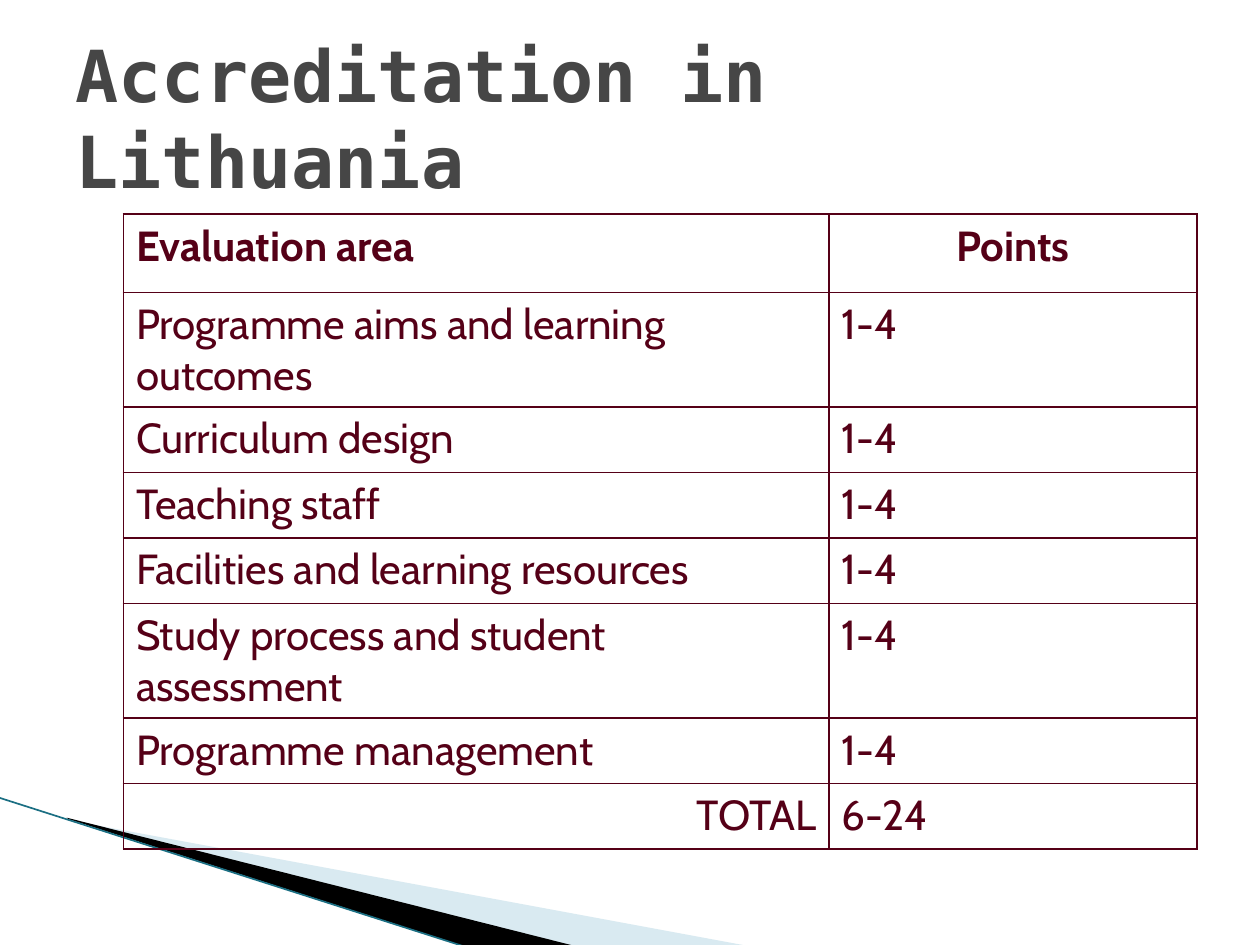
"""Build the slide on programme accreditation in Lithuania."""
from dataclasses import dataclass
from typing import Any, Optional

from lxml import etree
from pptx import Presentation
from pptx import util as u
from pptx.dml.color import RGBColor
from pptx.enum import shapes, text
from pptx.oxml import ns

MAROON = RGBColor(0x55, 0x00, 0x17)
GREY = RGBColor(0x46, 0x46, 0x46)
PALE_BLUE = RGBColor(0xA0, 0xCB, 0xDC)
BLACK = RGBColor(0x00, 0x00, 0x00)
TEAL = RGBColor(0x1B, 0x6F, 0x83)

COLUMN_WIDTHS = (5.6, 2.92)
HEADER_HEIGHT, LINE_HEIGHT, DOUBLE_HEIGHT = 0.62, 0.52, 0.91
TITLE_FORMAT = {"name": "DejaVu Sans Mono", "size": u.Pt(41), "bold": True}
CELL_FORMAT = {"name": "Cabin", "size": u.Pt(24), "bold": False}


@dataclass(frozen=True)
class Row:
    area: str
    points: str = "1-4"
    height: float = LINE_HEIGHT
    bold: bool = False
    area_align: text.PP_ALIGN = text.PP_ALIGN.LEFT
    points_align: text.PP_ALIGN = text.PP_ALIGN.LEFT


@dataclass(frozen=True)
class Wedge:
    points: tuple[tuple[float, float], ...]
    color: RGBColor
    opacity: Optional[int] = None


ROWS = (
    Row("Evaluation area", "Points", HEADER_HEIGHT, True,
        points_align=text.PP_ALIGN.CENTER),
    Row("Programme aims and learning outcomes", height=DOUBLE_HEIGHT),
    Row("Curriculum design"),
    Row("Teaching staff"),
    Row("Facilities and learning resources"),
    Row("Study process and student assessment", height=DOUBLE_HEIGHT),
    Row("Programme management"),
    Row("TOTAL", "6-24", area_align=text.PP_ALIGN.RIGHT),
)
WEDGES = (
    Wedge(((0.55, 6.51), (5.95, 7.51), (4.56, 7.51), (0.55, 6.5)), PALE_BLUE, 40),
    Wedge(((0.53, 6.49), (4.57, 7.51), (3.72, 7.52), (0.54, 6.5)), BLACK),
)


def set_font(font: Any, values: dict[str, Any], color: RGBColor) -> None:
    for name, value in values.items():
        setattr(font, name, value)
    font.color.rgb = color


def add_wedge(slide: Any, wedge: Wedge) -> None:
    start, *rest = [(u.Inches(x), u.Inches(y)) for x, y in wedge.points]
    builder = slide.shapes.build_freeform(*start)
    builder.add_line_segments(rest, close=True)
    shape = builder.convert_to_shape()
    shape.shadow.inherit = False
    shape.line.fill.background()
    shape.fill.solid()
    shape.fill.fore_color.rgb = wedge.color
    if wedge.opacity is not None:
        color = shape.fill._xPr.find(".//" + ns.qn("a:srgbClr"))
        etree.SubElement(color, ns.qn("a:alpha"), val=str(wedge.opacity * 1000))


def add_edge_line(slide: Any) -> None:
    ends = [u.Inches(value) for value in (-0.01, 6.33, 3.71, 7.52)]
    line = slide.shapes.add_connector(shapes.MSO_CONNECTOR.STRAIGHT, *ends)
    line.line.color.rgb = TEAL
    line.line.width = u.Pt(0.95)
    etree.SubElement(line._element.spPr, ns.qn("a:effectLst"))


def format_title(slide: Any) -> None:
    title = slide.shapes.title
    place = {"left": 0.5, "top": 0.3, "width": 9, "height": 1.25}
    for name, value in place.items():
        setattr(title, name, u.Inches(value))
    frame = title.text_frame
    frame.text = "Accreditation in Lithuania"
    frame.word_wrap = True
    frame.auto_size = text.MSO_AUTO_SIZE.NONE
    frame.vertical_anchor = text.MSO_ANCHOR.MIDDLE
    paragraph = frame.paragraphs[0]
    paragraph.alignment = text.PP_ALIGN.LEFT
    set_font(paragraph.runs[0].font, TITLE_FORMAT, GREY)


def add_borders(cell: Any) -> None:
    properties = cell._tc.get_or_add_tcPr()
    for index, side in enumerate(("lnL", "lnR", "lnT", "lnB")):
        border = etree.Element(ns.qn(f"a:{side}"), w=str(u.Pt(1)))
        fill = etree.SubElement(border, ns.qn("a:solidFill"))
        etree.SubElement(fill, ns.qn("a:srgbClr"), val=str(MAROON))
        properties.insert(index, border)


def fill_cell(cell: Any, words: str, align: text.PP_ALIGN, bold: bool) -> None:
    cell.text = words
    cell.fill.background()
    paragraph = cell.text_frame.paragraphs[0]
    paragraph.alignment = align
    set_font(paragraph.runs[0].font, CELL_FORMAT | {"bold": bold}, MAROON)
    add_borders(cell)


def add_points_table(slide: Any) -> None:
    size = (sum(COLUMN_WIDTHS), sum(row.height for row in ROWS))
    place = [u.Inches(value) for value in (0.98, 1.7, *size)]
    table = slide.shapes.add_table(len(ROWS), len(COLUMN_WIDTHS), *place).table
    table.first_row = table.horz_banding = False
    for column, width in zip(table.columns, COLUMN_WIDTHS):
        column.width = u.Inches(width)
    for index, row in enumerate(ROWS):
        table.rows[index].height = u.Inches(row.height)
        fill_cell(table.cell(index, 0), row.area, row.area_align, row.bold)
        fill_cell(table.cell(index, 1), row.points, row.points_align, row.bold)


def main() -> None:
    presentation = Presentation()
    presentation.slide_width = u.Inches(10)
    presentation.slide_height = u.Inches(7.5)
    slide = presentation.slides.add_slide(presentation.slide_layouts[5])
    for wedge in WEDGES:
        add_wedge(slide, wedge)
    add_edge_line(slide)
    format_title(slide)
    add_points_table(slide)
    presentation.save("out.pptx")


if __name__ == "__main__":
    main()
